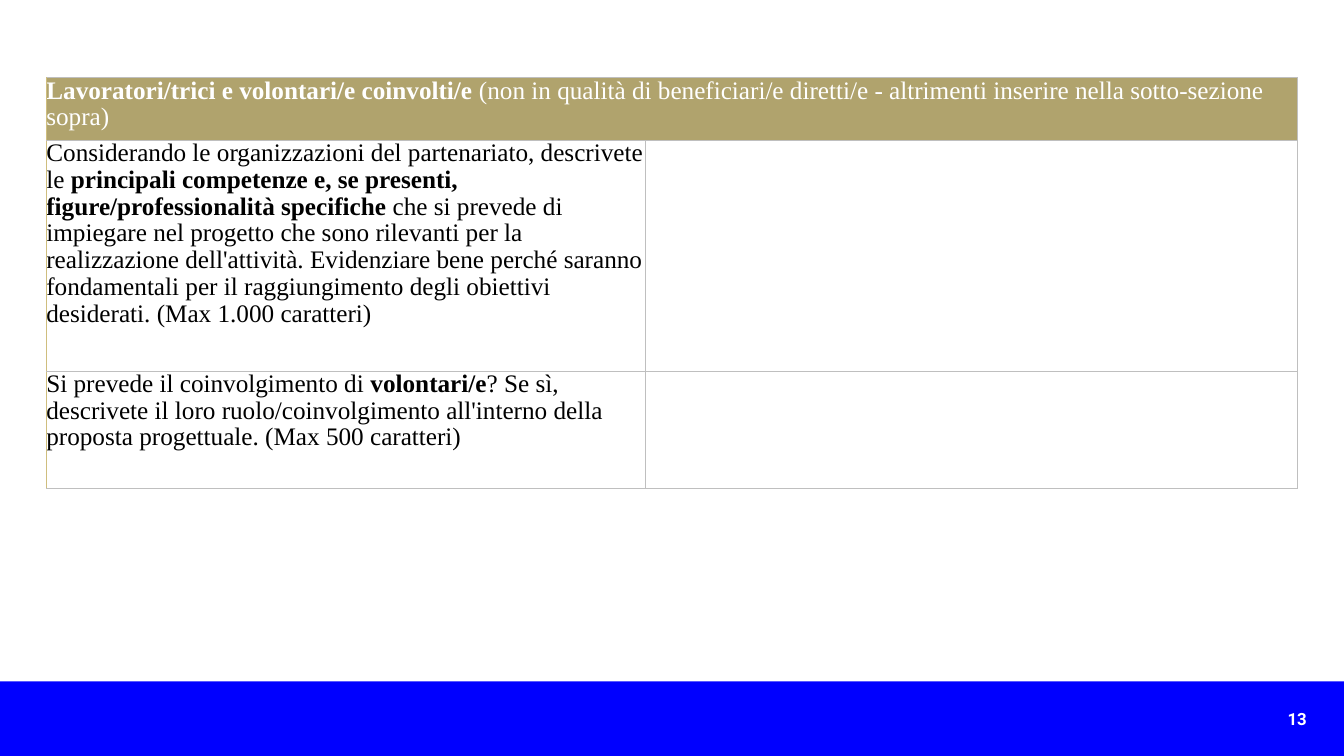
from dataclasses import dataclass
from lxml.etree import SubElement
from pptx import Presentation
from pptx.dml.color import RGBColor as RGB
from pptx.enum.shapes import MSO_SHAPE as Shape
from pptx.enum.text import MSO_ANCHOR as Anchor, PP_ALIGN as Align
from pptx.oxml.ns import qn
from pptx.util import Inches, Pt


@dataclass(frozen=True)
class Theme:
    blue: str = "0000FF"
    gold: str = "B0A36D"
    edge: str = "CFBE7E"
    grid: str = "BFBFBF"
    white: str = "FFFFFF"
    black: str = "000000"
    body_font: str = "Times New Roman"
    number_font: str = "Roboto"
    body_size: float = 18
    number_size: float = 12
    line_width: float = 0.5
    spacing: float = 0.96


T = Theme()
WIDTH, HEIGHT = 13.33, 7.5
COLUMNS = (5.94, 6.47)
ROWS = (0.62, 2.29, 1.17)
HEADER = [
    ("Lavoratori/trici e volontari/e coinvolti/e ", True),
    ("(non in qualità di beneficiari/e diretti/e - altrimenti inserire nella "
     "sotto-sezione sopra)", False),
]
QUESTIONS = [
    [("Considerando le organizzazioni del partenariato, descrivete le ", False),
     ("principali competenze e, se presenti, figure/professionalità specifiche", True),
     (" che si prevede di impiegare nel progetto che sono rilevanti per la "
      "realizzazione dell'attività. Evidenziare bene perché saranno fondamentali "
      "per il raggiungimento degli obiettivi desiderati. (Max 1.000 caratteri)", False)],
    [("Si prevede il coinvolgimento di", False),
     (" volontari/e", True),
     ("? Se sì, descrivete il loro ruolo/coinvolgimento all'interno della proposta "
      "progettuale. (Max 500 caratteri)", False)],
]


def write(tf, runs, *, font=T.body_font, size=T.body_size, color=T.black,
          align=Align.LEFT, spacing=T.spacing):
    """Write (text, bold) runs as one formatted paragraph."""
    tf.word_wrap = True
    p = tf.paragraphs[0]
    p.alignment = align
    p.line_spacing = spacing
    for text, bold in runs:
        r = p.add_run()
        r.text = text
        r.font.name, r.font.size, r.font.bold = font, Pt(size), bold
        r.font.color.rgb = RGB.from_string(color)


def style_cell(cell, fill, left):
    """Fill a cell, set its margins and draw its four borders."""
    cell.margin_left = cell.margin_right = cell.margin_top = 0
    cell.margin_bottom = Inches(0.02)
    cell.vertical_anchor = Anchor.TOP
    cell.fill.solid()
    cell.fill.fore_color.rgb = RGB.from_string(fill)
    props = cell._tc.get_or_add_tcPr()
    sides = {"lnL": left, "lnR": T.grid, "lnT": T.grid, "lnB": T.grid}
    for i, (side, color) in enumerate(sides.items()):
        line = SubElement(props, qn(f"a:{side}"), w=str(Pt(T.line_width)))
        SubElement(SubElement(line, qn("a:solidFill")), qn("a:srgbClr"), val=color)
        props.insert(i, line)


def add_form(s, left, top):
    """Place the question table with its header and empty answer cells."""
    table = s.shapes.add_table(len(ROWS), len(COLUMNS), Inches(left), Inches(top),
                               Inches(sum(COLUMNS)), Inches(sum(ROWS))).table
    table.horz_banding = False
    for column, width in zip(table.columns, COLUMNS):
        column.width = Inches(width)
    for i, (row, height) in enumerate(zip(table.rows, ROWS)):
        row.height = Inches(height)
        for j, cell in enumerate(row.cells):
            style_cell(cell, T.white if i else T.gold, T.grid if j else T.edge)
    table.cell(0, 0).merge(table.cell(0, 1))
    write(table.cell(0, 0).text_frame, HEADER, color=T.white)
    for i, runs in enumerate(QUESTIONS, start=1):
        write(table.cell(i, 0).text_frame, runs)


def add_footer(s, top, height, number):
    """Place the full-width bar and the page number at its right."""
    bar = s.shapes.add_shape(Shape.RECTANGLE, 0, Inches(top), Inches(WIDTH), Inches(height))
    bar.shadow.inherit = False
    bar.fill.solid()
    bar.fill.fore_color.rgb = RGB.from_string(T.blue)
    bar.line.fill.background()
    box = s.shapes.add_textbox(Inches(8.82), Inches(top + 0.22), Inches(4.24), Inches(0.3))
    write(box.text_frame, [(number, True)], font=T.number_font, size=T.number_size,
          color=T.white, align=Align.RIGHT, spacing=1.0)


def main():
    """Build and save the slide."""
    prs = Presentation()
    prs.slide_width, prs.slide_height = Inches(WIDTH), Inches(HEIGHT)
    s = prs.slides.add_slide(prs.slide_layouts[6])
    add_footer(s, 6.76, 0.74, "13")
    add_form(s, 0.46, 0.77)
    prs.save("out.pptx")


if __name__ == "__main__":
    main()
